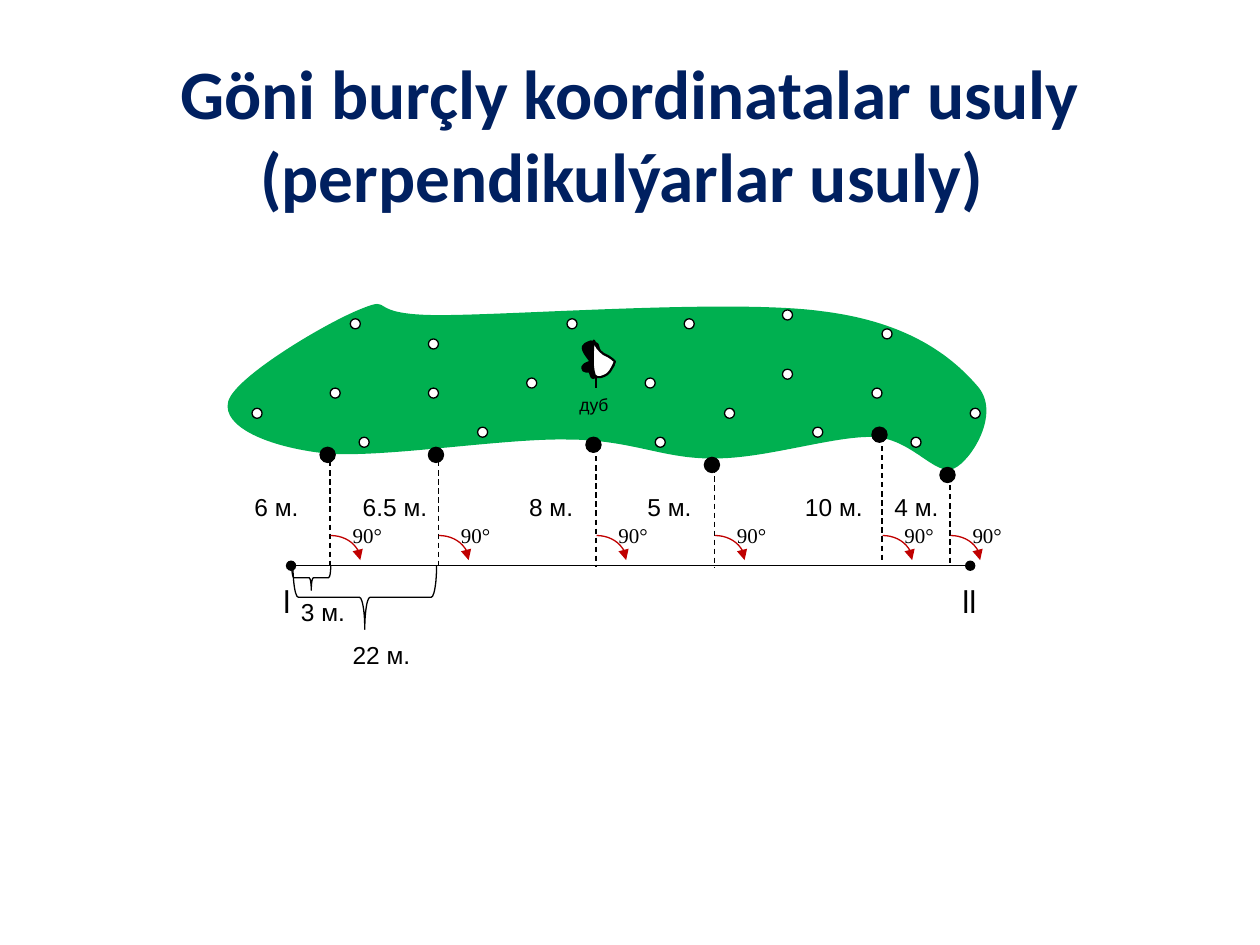
from lxml.etree import SubElement
from pptx import Presentation
from pptx.dml.color import RGBColor
from pptx.enum.dml import MSO_LINE
from pptx.enum.shapes import MSO_CONNECTOR, MSO_SHAPE
from pptx.enum.text import MSO_ANCHOR, PP_ALIGN
from pptx.oxml.ns import qn
from pptx.util import Inches, Pt

THEME = {
    "navy": "002060", "green": "00B050", "red": "C00000",
    "black": "000000", "white": "FFFFFF",
    "title": 39.6, "mark": 18, "label": 14, "angle": 12, "small": 10,
    "thin": 0.75, "thick": 1.25,
}

# Content
TITLE = "Göni burçly koordinatalar usuly (perpendikulýarlar usuly) "
# x, dot top, line top, line bottom, distance text, text left
STAKES = [
    (2.62, 3.55, 3.59, 4.50, "6 м.", 1.92),
    (3.48, 3.55, 3.59, 4.50, "6.5 м.", 2.78),
    (4.73, 3.47, 3.55, 4.50, "8 м.", 4.10),
    (5.67, 3.63, 3.71, 4.50, "5 м.", 5.04),
    (7.00, 3.39, 3.47, 4.46, "10 м.", 6.29),
    (7.54, 3.71, 3.78, 4.47, "4 м.", 7.00),
]
TREES = [
    (2.00, 3.24), (2.78, 2.53), (2.85, 3.47), (3.40, 3.08), (3.79, 3.39),
    (4.50, 2.53), (5.20, 3.47), (5.43, 2.53), (5.75, 3.24), (6.21, 2.46),
    (6.45, 3.39), (7.00, 2.61), (7.23, 3.47), (7.70, 3.24), (3.40, 2.69),
    (4.18, 3.00), (5.12, 3.00), (2.62, 3.08), (6.92, 3.08), (6.21, 2.93),
]
# text, left, top, width, height, size
LABELS = [
    ("дуб", 4.50, 3.08, 0.86, 0.27, "small"),
    ("l", 2.15, 4.57, 0.62, 0.39, "mark"),
    ("ll", 7.54, 4.57, 0.62, 0.40, "mark"),
    ("3 м.", 2.29, 4.69, 0.70, 0.34, "label"),
    ("22 м.", 2.70, 5.03, 0.83, 0.57, "label"),
]
# left, top, width, height before the quarter turn
BRACES = [(2.37, 4.43, 0.20, 0.31), (2.64, 4.17, 0.51, 1.14)]

# Curves: a start point, then two control points and an end point per segment
FOREST = [
    (3.49, 2.51),
    (2.87, 2.51), (3.14, 2.35), (2.87, 2.46),
    (2.59, 2.57), (1.87, 3.00), (1.82, 3.19),
    (1.77, 3.38), (2.13, 3.54), (2.58, 3.59),
    (3.03, 3.63), (3.99, 3.47), (4.50, 3.48),
    (5.02, 3.48), (5.27, 3.64), (5.68, 3.63),
    (6.08, 3.63), (6.62, 3.45), (6.93, 3.46),
    (7.24, 3.47), (7.43, 3.78), (7.57, 3.71),
    (7.70, 3.65), (7.93, 3.29), (7.76, 3.08),
    (7.58, 2.87), (7.25, 2.57), (6.53, 2.48),
    (5.82, 2.38), (4.10, 2.51), (3.49, 2.51),
]
DARK_LEAF = [
    (4.72, 2.95),
    (4.75, 2.94), (4.85, 2.94), (4.87, 2.90),
    (4.87, 2.89), (4.87, 2.87), (4.85, 2.86),
    (4.83, 2.84), (4.80, 2.85), (4.77, 2.84),
    (4.77, 2.84), (4.75, 2.74), (4.74, 2.73),
    (4.73, 2.72), (4.71, 2.72), (4.69, 2.71),
    (4.67, 2.72), (4.61, 2.73), (4.63, 2.78),
    (4.64, 2.81), (4.69, 2.87), (4.69, 2.87),
    (4.67, 2.88), (4.60, 2.89), (4.63, 2.94),
    (4.64, 2.95), (4.66, 2.95), (4.68, 2.95),
    (4.69, 2.97), (4.69, 3.00), (4.71, 3.00),
    (4.73, 3.00), (4.70, 2.97), (4.72, 2.95),
]
LIGHT_LEAF = [
    (4.71, 2.71),
    (4.71, 2.75), (4.69, 2.90), (4.72, 2.98),
    (4.74, 3.01), (4.79, 2.99), (4.82, 2.97),
    (4.85, 2.95), (4.88, 2.87), (4.88, 2.87),
    (4.87, 2.86), (4.85, 2.84), (4.83, 2.83),
    (4.82, 2.82), (4.80, 2.82), (4.79, 2.81),
    (4.77, 2.80), (4.76, 2.78), (4.74, 2.76),
    (4.73, 2.75), (4.71, 2.68), (4.71, 2.71),
]


def color(name):
    return RGBColor.from_string(THEME[name])


def add_text(shapes, text, x, y, w, h, size="label", font="Arial", fill="black",
             bold=False, align=PP_ALIGN.LEFT, anchor=MSO_ANCHOR.TOP):
    tf = shapes.add_textbox(*map(Inches, (x, y, w, h))).text_frame
    tf.word_wrap = True
    tf.vertical_anchor = anchor
    p = tf.paragraphs[0]
    p.alignment = align
    r = p.add_run()
    r.text = text
    r.font.name, r.font.size, r.font.bold = font, Pt(THEME[size]), bold
    r.font.color.rgb = color(fill)


def paint(sp, fill=None, line="black", width="thin"):
    sp.shadow.inherit = False
    if fill:
        sp.fill.solid()
        sp.fill.fore_color.rgb = color(fill)
    else:
        sp.fill.background()
    sp.line.color.rgb = color(line)
    sp.line.width = Pt(THEME[width])


def add_ends(sp, **ends):
    for end in ("head", "tail"):
        if end in ends:
            SubElement(sp.line._get_or_add_ln(), qn(f"a:{end}End"), type=ends[end])


def add_shape(shapes, kind, x, y, w, h, **style):
    sp = shapes.add_shape(kind, *map(Inches, (x, y, w, h)))
    paint(sp, **style)
    return sp


def add_line(shapes, x1, y1, x2, y2, dash=None, **ends):
    sp = shapes.add_connector(MSO_CONNECTOR.STRAIGHT, *map(Inches, (x1, y1, x2, y2)))
    sp.line.color.rgb = color("black")
    sp.line.width = Pt(THEME["thin"])
    if dash:
        sp.line.dash_style = dash
    add_ends(sp, **ends)
    SubElement(sp._element.spPr, qn("a:effectLst"))


def add_curve(shapes, points, **style):
    start, *rest = [(Inches(x), Inches(y)) for x, y in points]
    builder = shapes.build_freeform(*start)
    builder.add_line_segments(rest, close=True)
    sp = builder.convert_to_shape()
    outline = sp._element.find(".//" + qn("a:path"))
    steps = outline.findall(qn("a:lnTo"))
    # Every three steps become one cubic segment
    for i in range(0, len(rest), 3):
        curve = outline.makeelement(qn("a:cubicBezTo"))
        steps[i].addprevious(curve)
        for step in steps[i:i + 3]:
            curve.append(step[0])
            outline.remove(step)
    paint(sp, width="thick", **style)


def main():
    prs = Presentation()
    prs.slide_width, prs.slide_height = Inches(10), Inches(7.5)
    shapes = prs.slides.add_slide(prs.slide_layouts[6]).shapes

    add_text(shapes, TITLE, 0.5, 0.37, 9, 1.37, size="title", font="Calibri",
             fill="navy", bold=True, align=PP_ALIGN.CENTER, anchor=MSO_ANCHOR.MIDDLE)

    # Survey line, forest and trees
    add_line(shapes, 2.31, 4.49, 7.7, 4.49, head="oval", tail="oval")
    add_curve(shapes, FOREST, fill="green", line="green")
    for x, y in TREES:
        add_shape(shapes, MSO_SHAPE.OVAL, x, y, 0.08, 0.08, fill="white")

    # Oak sign
    add_line(shapes, 4.73, 2.93, 4.73, 3.08)
    add_curve(shapes, DARK_LEAF, fill="black")
    add_curve(shapes, LIGHT_LEAF, fill="white")

    # Perpendiculars with their right angles and lengths
    for x, dot_top, top, bottom, distance, left in STAKES:
        add_shape(shapes, MSO_SHAPE.OVAL, x - 0.08, dot_top, 0.12, 0.12, fill="black")
        add_line(shapes, x, top, x, bottom, dash=MSO_LINE.DASH)
        angle = shapes.add_group_shape().shapes
        arc = add_shape(angle, MSO_SHAPE.ARC, x - 0.23, 4.25, 0.47, 0.39, line="red")
        add_ends(arc, tail="triangle")
        add_text(angle, "90°", x + 0.08, 4.1, 0.55, 0.3, size="angle",
                 font="Times New Roman")
        add_text(shapes, distance, left, 3.86, 0.79, 0.34)

    # Distances along the survey line
    for box in BRACES:
        add_shape(shapes, MSO_SHAPE.RIGHT_BRACE, *box).rotation = 90
    for text, x, y, w, h, size in LABELS:
        add_text(shapes, text, x, y, w, h, size=size)

    prs.save("out.pptx")


if __name__ == "__main__":
    main()
